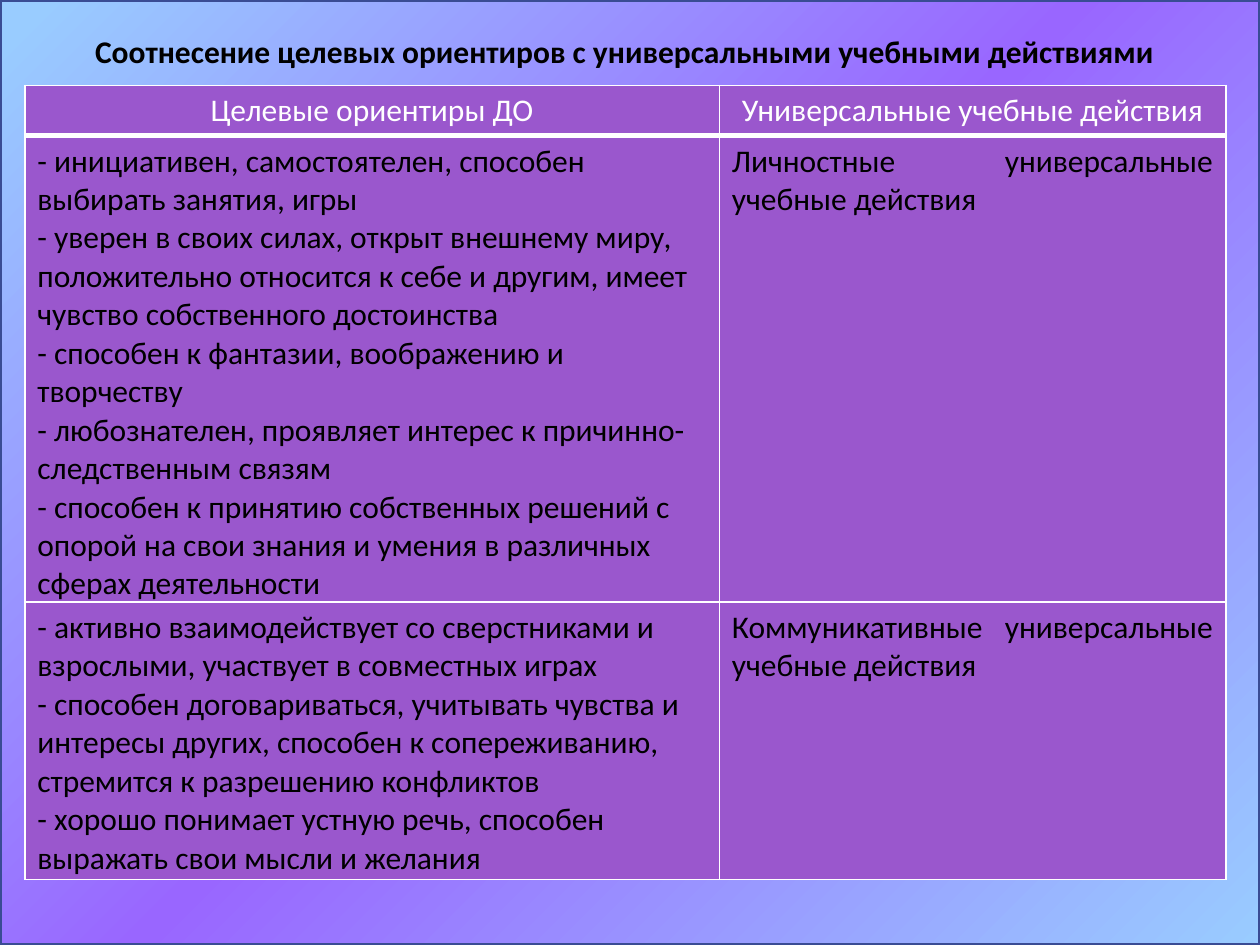
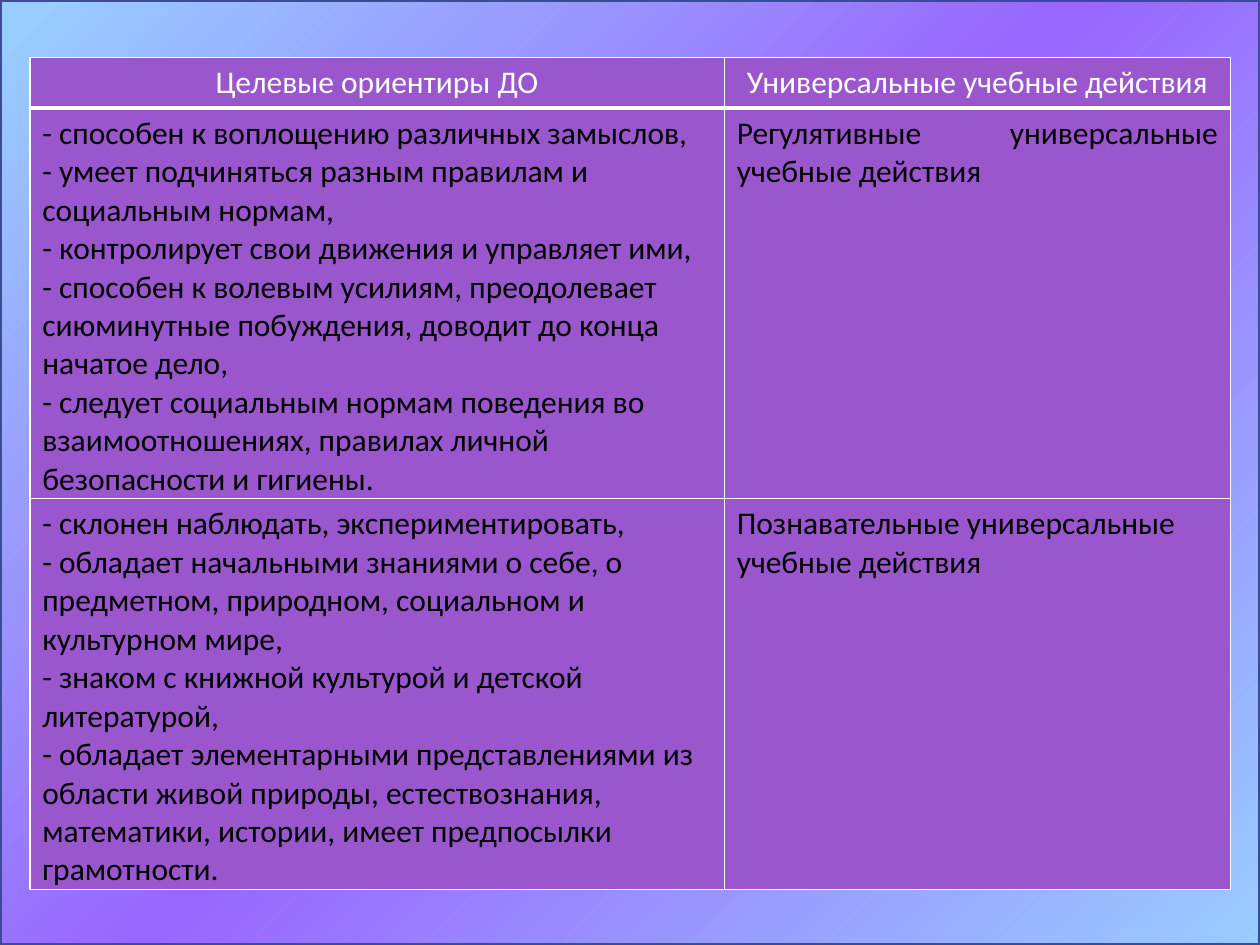
from lxml import etree
from pptx import Presentation
from pptx.dml.color import RGBColor
from pptx.enum.shapes import MSO_SHAPE
from pptx.enum.text import MSO_AUTO_SIZE, PP_ALIGN
from pptx.oxml import parse_xml
from pptx.oxml.ns import qn
from pptx.util import Cm, Pt

RECT = MSO_SHAPE.RECTANGLE
GROW = MSO_AUTO_SIZE.SHAPE_TO_FIT_TEXT
LEFT, CENTER, JUSTIFY = PP_ALIGN.LEFT, PP_ALIGN.CENTER, PP_ALIGN.JUSTIFY

WHITE = RGBColor(0xFF, 0xFF, 0xFF)
BLACK = RGBColor(0x00, 0x00, 0x00)
SKY = RGBColor(0x99, 0xCC, 0xFF)
VIOLET = RGBColor(0x99, 0x66, 0xFF)
PURPLE = RGBColor(0x9A, 0x57, 0xCD)
NAVY = RGBColor(0x3A, 0x4C, 0x94)

FONT, SIZE = "Calibri", Pt(18)
DRAWING_NS = "http://schemas.openxmlformats.org/drawingml/2006/main"
GRADIENT = ((2, SKY), (49, VIOLET), (100, SKY))
COLUMN_WIDTHS = (Cm(14), Cm(10.21))
ROW_HEIGHTS = (Cm(0.79), Cm(1.47), Cm(1.47))  # minimum, rows grow with text
HEADER = ("Целевые ориентиры ДО", "Универсальные учебные действия")


class Deck:
    """Holds the shared style and the slide being built."""

    def __init__(self):
        self.prs = Presentation()
        self.prs.slide_width, self.prs.slide_height = Cm(25.4), Cm(19.05)
        self.s = None

    def slide(self):
        self.s = self.prs.slides.add_slide(self.prs.slide_layouts[6])
        self.background()

    def background(self):
        sp = self.s.shapes.add_shape(
            RECT, 0, 0, self.prs.slide_width, self.prs.slide_height)
        sp.shadow.inherit = False
        sp.line.color.rgb = NAVY
        sp.line.width = Pt(2)
        # Three-stop diagonal gradient
        stops = "".join(
            f'<a:gs pos="{pos * 1000}"><a:srgbClr val="{color}"/></a:gs>'
            for pos, color in GRADIENT)
        gradient = parse_xml(
            f'<a:gradFill xmlns:a="{DRAWING_NS}" rotWithShape="1">'
            f'<a:gsLst>{stops}</a:gsLst>'
            f'<a:lin ang="{45 * 60000}" scaled="0"/></a:gradFill>')
        sp.element.spPr.find(qn("a:prstGeom")).addnext(gradient)

    def style(self, p, color, align, bold=False):
        p.alignment = align
        for r in p.runs:
            r.font.name, r.font.size = FONT, SIZE
            r.font.bold = bold
            r.font.color.rgb = color

    def title(self, text):
        sp = self.s.shapes.add_textbox(Cm(1.09), Cm(0.53), Cm(23.01), Cm(1.02))
        tf = sp.text_frame
        tf.word_wrap = True
        tf.auto_size = GROW
        tf.text = text
        self.style(tf.paragraphs[0], BLACK, CENTER, bold=True)

    def borders(self, cell, top, bottom):
        tc_pr = cell._tc.get_or_add_tcPr()
        widths = (("lnL", 1), ("lnR", 1), ("lnT", top), ("lnB", bottom))
        for i, (tag, width) in enumerate(widths):
            ln = etree.Element(qn(f"a:{tag}"), w=str(Pt(width)))
            fill = etree.SubElement(ln, qn("a:solidFill"))
            etree.SubElement(fill, qn("a:srgbClr"), val=str(WHITE))
            tc_pr.insert(i, ln)

    def cell(self, cell, paragraphs, color, align, top=1, bottom=1):
        cell.fill.solid()
        cell.fill.fore_color.rgb = PURPLE
        self.borders(cell, top, bottom)
        tf = cell.text_frame
        for i, text in enumerate(paragraphs):
            p = tf.add_paragraph() if i else tf.paragraphs[0]
            p.text = text
            self.style(p, color, align)

    def table(self, left, top, height, rows):
        frame = self.s.shapes.add_table(
            len(rows) + 1, 2, left, top, sum(COLUMN_WIDTHS), height)
        table = frame.table
        table.horz_banding = False
        for column, width in zip(table.columns, COLUMN_WIDTHS):
            column.width = width
        for row, row_height in zip(table.rows, ROW_HEIGHTS):
            row.height = row_height
        frame.height = height

        for j, heading in enumerate(HEADER):
            self.cell(table.cell(0, j), [heading], WHITE, CENTER, bottom=3)
        for i, (goals, action, align) in enumerate(rows, start=1):
            rule = 3 if i == 1 else 1
            self.cell(table.cell(i, 0), goals, BLACK, LEFT, top=rule)
            self.cell(table.cell(i, 1), [action], BLACK, align, top=rule)


# Each row: target goals, matching learning actions, alignment of the latter
PERSONAL_AND_COMMUNICATIVE = (
    ((
        "- инициативен, самостоятелен, способен выбирать занятия, игры",
        "- уверен в своих силах, открыт внешнему миру, положительно относится "
        "к себе и другим, имеет чувство собственного достоинства",
        "- способен к фантазии, воображению и творчеству",
        "- любознателен, проявляет интерес к причинно-следственным связям",
        "- способен к принятию собственных решений с опорой на свои знания "
        "и умения в различных сферах деятельности",
    ), "Личностные универсальные учебные действия", JUSTIFY),
    ((
        "- активно взаимодействует со сверстниками и взрослыми, участвует "
        "в совместных играх",
        "- способен договариваться, учитывать чувства и интересы других, "
        "способен к сопереживанию, стремится к разрешению конфликтов",
        "- хорошо понимает устную речь, способен выражать свои мысли и желания",
    ), "Коммуникативные универсальные учебные действия", JUSTIFY),
)
REGULATORY_AND_COGNITIVE = (
    ((
        "- способен к воплощению различных замыслов,",
        "- умеет подчиняться разным правилам и социальным нормам,",
        "- контролирует свои движения и управляет ими,",
        "- способен к волевым усилиям, преодолевает сиюминутные побуждения, "
        "доводит до конца начатое дело,",
        "- следует социальным нормам поведения во взаимоотношениях, правилах "
        "личной безопасности и гигиены.",
    ), "Регулятивные универсальные\vучебные действия", JUSTIFY),
    ((
        "- склонен наблюдать, экспериментировать,",
        "- обладает начальными знаниями о себе, о предметном, природном, "
        "социальном и культурном мире,",
        "- знаком с книжной культурой и детской литературой,",
        "- обладает элементарными представлениями из области живой природы, "
        "естествознания, математики, истории, имеет предпосылки грамотности.",
    ), "Познавательные универсальные учебные действия", LEFT),
)


def main():
    deck = Deck()

    # Slide 1: personal and communicative actions
    deck.slide()
    deck.title("Соотнесение целевых ориентиров с универсальными учебными действиями")
    deck.table(Cm(0.5), Cm(1.72), Cm(16), PERSONAL_AND_COMMUNICATIVE)

    # Slide 2: regulatory and cognitive actions
    deck.slide()
    deck.table(Cm(0.6), Cm(1.16), Cm(16.76), REGULATORY_AND_COGNITIVE)

    deck.prs.save("out.pptx")


if __name__ == "__main__":
    main()
